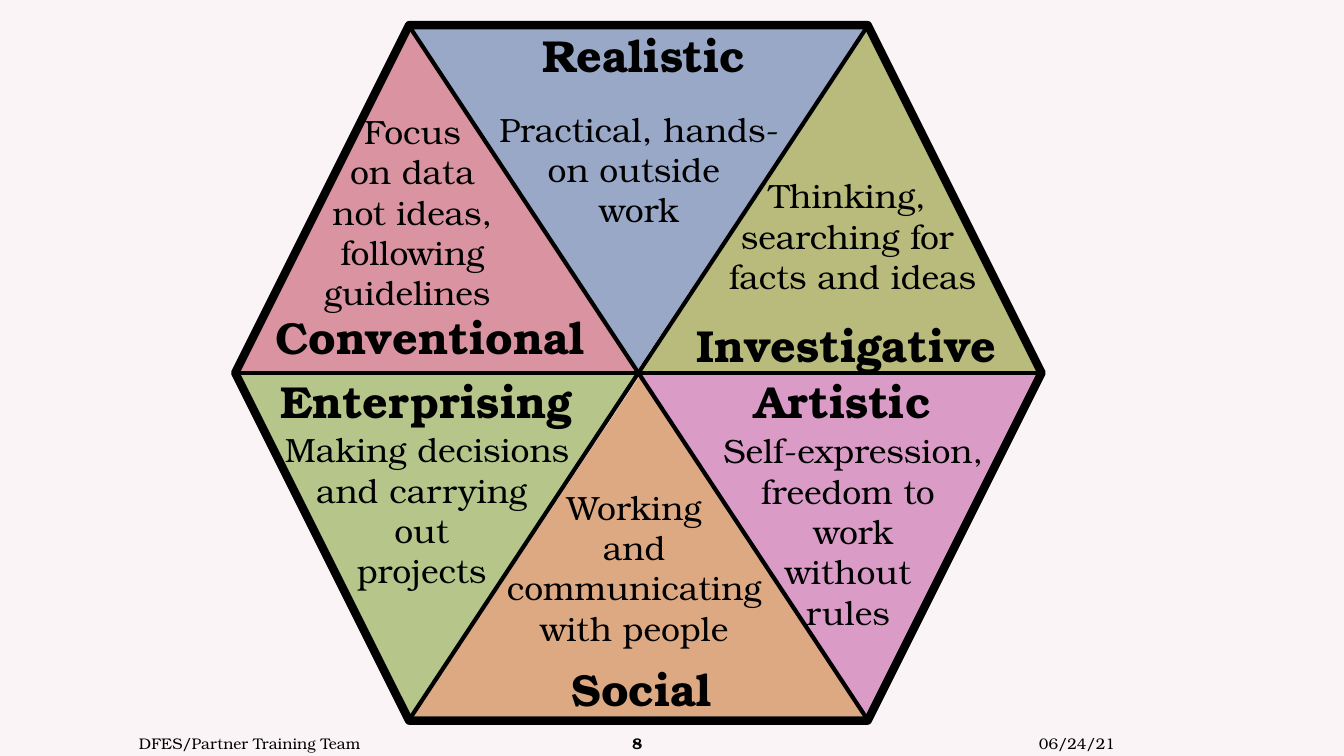
from lxml.etree import SubElement
from pptx import Presentation
from pptx.dml.color import RGBColor
from pptx.enum.shapes import MSO_CONNECTOR, MSO_SHAPE
from pptx.enum.text import MSO_ANCHOR, PP_ALIGN
from pptx.oxml.ns import qn
from pptx.util import Inches, Pt

HUES = {
    "back": "FAF4F7", "ink": "000000",
    "rose": "D993A1", "olive": "B8BB7B", "green": "B6C68B",
    "pink": "DA9CC7", "sand": "DCA983", "blue": "9AA8C7",
}


class Sheet:
    """Style and slide; all lengths are percent of the slide's size."""
    font = "TeX Gyre Bonum"

    def __init__(self, deck):
        self.wide, self.high = deck.slide_width, deck.slide_height
        self.slide = deck.slides.add_slide(deck.slide_layouts[6])
        fill = self.slide.background.fill
        fill.solid()
        fill.fore_color.rgb = self.hue("back")

    def hue(self, name):
        return RGBColor.from_string(HUES[name])

    def place(self, x, y, w, h):
        return (round(x * self.wide / 100), round(y * self.high / 100),
                round(w * self.wide / 100), round(h * self.high / 100))

    def wedge(self, box, hue, flip="", tip=0.5):
        form = self.slide.shapes.add_shape(
            MSO_SHAPE.ISOSCELES_TRIANGLE, *self.place(*box))
        form.shadow.inherit = False
        form.adjustments[0] = tip
        form.fill.solid()
        form.fill.fore_color.rgb = self.hue(hue)
        form.line.fill.background()
        for side in flip:
            form._element.spPr.find(qn("a:xfrm")).set("flip" + side, "1")

    def frame(self, box, size):
        form = self.slide.shapes.add_shape(MSO_SHAPE.HEXAGON, *self.place(*box))
        form.shadow.inherit = False
        form.fill.background()
        form.line.color.rgb = self.hue("ink")
        form.line.width = Pt(size)

    def line(self, ends, size):
        link = self.slide.shapes.add_connector(
            MSO_CONNECTOR.STRAIGHT, *self.place(*ends))
        link.line.color.rgb = self.hue("ink")
        link.line.width = Pt(size)
        SubElement(link._element.spPr, qn("a:effectLst"))

    def text(self, box, lines, size, bold=False, align=PP_ALIGN.CENTER,
             anchor=MSO_ANCHOR.TOP):
        frame = self.slide.shapes.add_textbox(*self.place(*box)).text_frame
        frame.word_wrap = True
        frame.vertical_anchor = anchor
        frame.text = lines
        for para in frame.paragraphs:
            para.alignment = align
            for run in para.runs:
                run.font.name = self.font
                run.font.size = Pt(size)
                run.font.bold = bold
                run.font.color.rgb = self.hue("ink")


def main():
    deck = Presentation()
    deck.slide_width, deck.slide_height = Inches(13.33), Inches(7.5)
    sheet = Sheet(deck)

    # Hexagon measures
    left, top, half, rise = 17.5, 3.33, 30, 46
    mid, low = left + half, top + rise
    right, foot = mid + half, low + rise
    inset = 12.9

    # Six coloured wedges
    wedges = [
        ((left, top, half, rise), "rose", "", 0.437),
        ((mid, top, half, rise), "olive", "H", 0.423),
        ((17.2, low, 30.15, rise), "green", "V", 0.437),
        ((47.62, 49.6, half, rise), "pink", "HV", 0.437),
        ((30.75, 49.87, 33.6, 44.93), "sand", "", 0.5),
        ((30.68, 3.87, 33.6, 44.93), "blue", "V", 0.5),
    ]
    for wedge in wedges:
        sheet.wedge(*wedge)

    # Outline and diagonals
    sheet.frame((left, top, 2 * half, 2 * rise), 6)
    for ends in [(left, low, right, low),
                 (left + inset, top, right - inset, foot),
                 (left + inset, foot, right - inset, top)]:
        sheet.line(ends, 3)

    # Type names
    names = [
        ("Realistic", 39.6, 3.07, 17.85),
        ("Investigative", 51.1, 41.33, 24.1),
        ("Conventional", 19.73, 40.27, 25.65),
        ("Enterprising", 20.1, 48.8, 24.3),
        ("Social", 41.78, 86.93, 12.45),
        ("Artistic", 55.43, 48.8, 14.7),
    ]
    for name, x, y, w in names:
        sheet.text((x, y, w, 8.53), name, 32, True, PP_ALIGN.LEFT)

    # Descriptions
    notes = [
        ((32.55, 13.73, 30, 17.47), "Practical, hands-\non outside \nwork"),
        ((52, 22.53, 22.88, 17.47),
         "Thinking, \nsearching for \nfacts and ideas"),
        ((52.05, 56.27, 22.88, 28.27),
         "Self-expression, freedom to \nwork\nwithout \nrules "),
        ((36.45, 63.73, 22.28, 22.93),
         "Working \nand \ncommunicating \nwith people "),
        ((20.33, 56.13, 22.88, 22.93),
         "Making decisions and carrying \nout \nprojects "),
        ((17.25, 14, 27.68, 28.27),
         "Focus \non data \nnot ideas, \nfollowing \nguidelines  "),
    ]
    for box, lines in notes:
        sheet.text(box, lines, 24)

    # Footer
    feet = [
        ("DFES/Partner Training Team", 9.6, 29.55, False, PP_ALIGN.LEFT),
        ("8", 44.78, 5.25, True, PP_ALIGN.CENTER),
        ("06/24/21", 56.85, 26.85, False, PP_ALIGN.RIGHT),
    ]
    for words, x, w, bold, align in feet:
        sheet.text((x, 95.6, w, 5.33), words, 11, bold, align,
                   MSO_ANCHOR.MIDDLE)

    deck.save("out.pptx")


if __name__ == "__main__":
    main()
